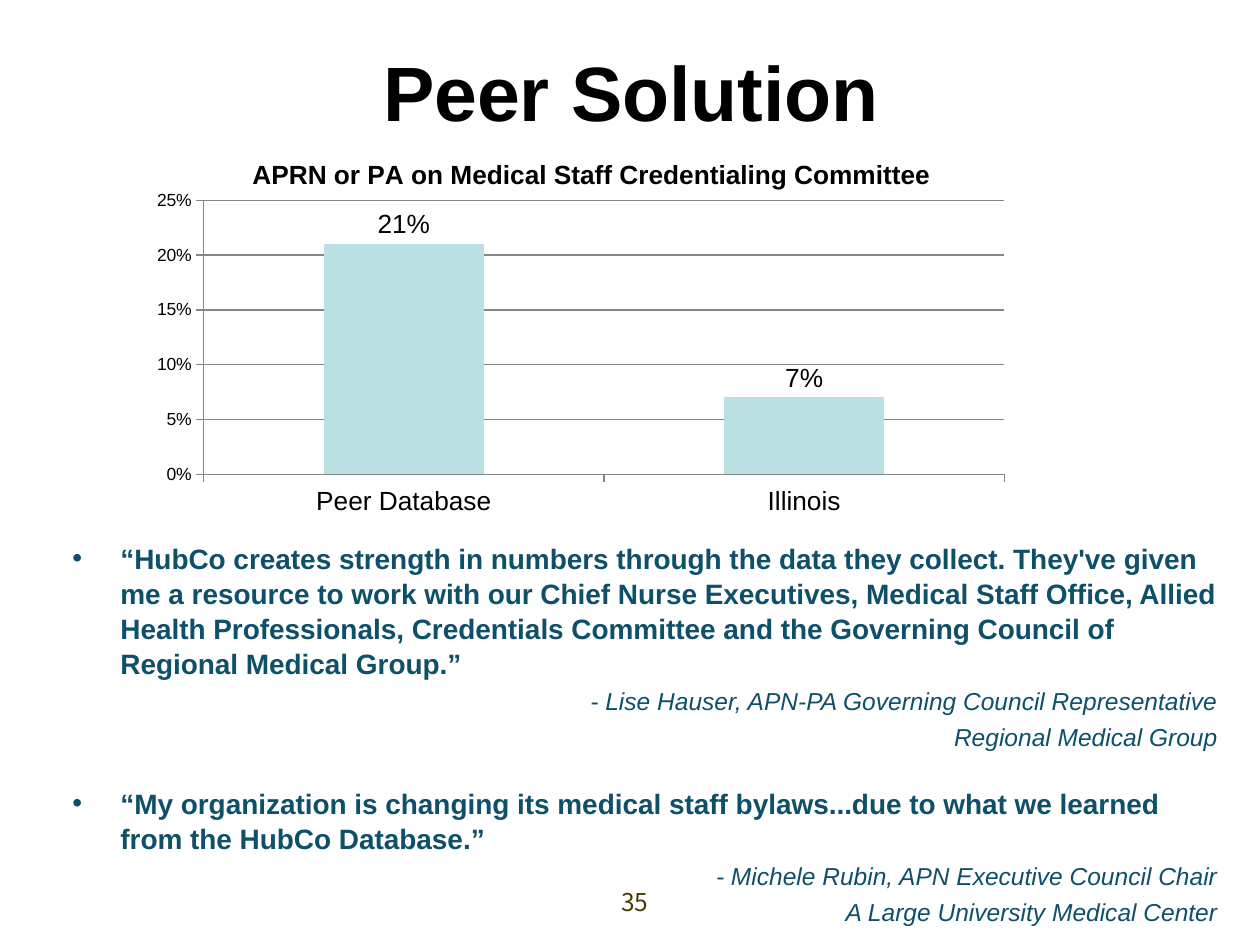
from lxml.etree import SubElement
from pptx import Presentation
from pptx.chart.data import CategoryChartData as Data
from pptx.dml.color import RGBColor as RGB
from pptx.enum.chart import XL_CHART_TYPE as Kind, XL_LABEL_POSITION as Spot
from pptx.enum.chart import XL_TICK_MARK as Tick
from pptx.enum.text import MSO_ANCHOR as Anchor, PP_ALIGN as Align
from pptx.oxml import parse_xml
from pptx.oxml.ns import nsdecls, qn
from pptx.util import Pt

PX = 914400 / 126
HUES = {"ink": "000000", "quote": "0E4F69", "bar": "BBE0E3",
        "grid": "868686", "page": "4B3905"}
FACE = "Arial"
HEAD = "APRN or PA on Medical Staff Credentialing Committee"
RATES = {"Peer Database": 0.21, "Illinois": 0.07}
QUOTES = [
    ("“HubCo creates strength in numbers through the data they collect. "
     "They've given me a resource to work with our Chief Nurse Executives, "
     "Medical Staff Office, Allied Health Professionals, Credentials Committee "
     "and the Governing Council of Regional Medical Group.”",
     ["- Lise Hauser, APN-PA Governing Council Representative",
      "Regional Medical Group"]),
    ("“My organization is changing its medical staff bylaws...due to what we "
     "learned from the HubCo Database.”",
     ["- Michele Rubin, APN Executive Council Chair",
      "A Large University Medical Center"]),
]


def emu(*box):
    return [round(n * PX) for n in box]


def style(font, size, hue="ink", **more):
    look = {"name": FACE, "size": Pt(size), "bold": False, "italic": False, **more}
    for key, val in look.items():
        setattr(font, key, val)
    font.color.rgb = RGB.from_string(HUES[hue])


def add_title(slide, box):
    shape = slide.shapes.title
    shape.left, shape.top, shape.width, shape.height = emu(*box)
    frame = shape.text_frame
    frame.text = "Peer Solution"
    frame.vertical_anchor = Anchor.TOP
    para = frame.paragraphs[0]
    para.alignment = Align.CENTER
    style(para.font, 44, bold=True)


def place(node, before, **parts):
    """Put a manual layout into a chart title or plot area."""
    for old in node.findall(qn("c:layout")):
        node.remove(old)
    vals = "".join(f'<c:{key} val="{val}"/>' for key, val in parts.items())
    layout = parse_xml(f'<c:layout {nsdecls("c")}><c:manualLayout>{vals}'
                       '</c:manualLayout></c:layout>')
    node.insert(before, layout)


def add_bars(slide, box):
    data = Data(number_format="0%")
    data.categories = list(RATES)
    data.add_series(HEAD, list(RATES.values()))
    chart = slide.shapes.add_chart(Kind.COLUMN_CLUSTERED, *emu(*box), data).chart
    style(chart.font, 10)
    chart.has_legend = False

    # Heading
    chart.has_title = True
    frame = chart.chart_title.text_frame
    frame.text = HEAD
    style(frame.paragraphs[0].runs[0].font, 15, bold=True)
    place(chart.chart_title._element, 1, xMode="edge", yMode="edge", x=0.12, y=0.07)

    # Plot frame
    area = chart._chartSpace.chart.plotArea
    place(area, 0, layoutTarget="inner", xMode="edge", yMode="edge",
          x=0.07, y=0.19, w=0.91, h=0.69)

    # Axes
    rate, place_axis = chart.value_axis, chart.category_axis
    rate.minimum_scale, rate.maximum_scale, rate.major_unit = 0, 0.25, 0.05
    rate.tick_labels.number_format = "0%"
    rate.tick_labels.number_format_is_linked = False
    rate.has_major_gridlines = True
    for axis, size in ((rate, 10), (place_axis, 15)):
        axis.major_tick_mark = Tick.OUTSIDE
        style(axis.tick_labels.font, size)
    for line in (rate.format.line, place_axis.format.line,
                 rate.major_gridlines.format.line):
        line.width = Pt(0.75)
        line.color.rgb = RGB.from_string(HUES["grid"])

    # Bars and labels
    plot = chart.plots[0]
    plot.gap_width, plot.vary_by_categories = 150, False
    fill = plot.series[0].format.fill
    fill.solid()
    fill.fore_color.rgb = RGB.from_string(HUES["bar"])
    plot.has_data_labels = True
    labels = plot.data_labels
    labels.show_value, labels.position = True, Spot.OUTSIDE_END
    labels.number_format, labels.number_format_is_linked = "0%", False
    style(labels.font, 15)


def add_bullet(para, indent):
    props = para._p.get_or_add_pPr()
    props.set("marL", str(indent))
    props.set("indent", str(-indent))
    SubElement(props, qn("a:buFont")).set("typeface", FACE)
    SubElement(props, qn("a:buChar")).set("char", "•")


def add_quotes(slide, box):
    frame = slide.shapes.add_textbox(*emu(*box)).text_frame
    frame.word_wrap = True
    para = frame.paragraphs[0]
    for at, (quote, source) in enumerate(QUOTES):
        if at:
            para = frame.add_paragraph()
            para.space_before = Pt(19)
        para.line_spacing = 1.04
        add_bullet(para, *emu(48))
        para.text = quote
        style(para.font, 16, "quote", bold=True)
        for line in source:
            para = frame.add_paragraph()
            para.text = line
            para.alignment = Align.RIGHT
            para.line_spacing, para.space_before = 1.04, Pt(3)
            style(para.font, 14, "quote", italic=True)


def add_page(slide, box):
    frame = slide.shapes.add_textbox(*emu(*box)).text_frame
    frame.word_wrap = True
    para = frame.paragraphs[0]
    para.text = "35"
    para.alignment = Align.CENTER
    style(para.font, 14, "page", name="Noto Sans CJK JP")


def main():
    deck = Presentation()
    deck.slide_width, deck.slide_height = emu(1260, 945)
    slide = deck.slides.add_slide(deck.slide_layouts[5])
    add_page(slide, (504, 881, 262, 63))
    add_title(slide, (16, 38, 1231, 158))
    add_quotes(slide, (60, 534, 1170, 411))
    add_bars(slide, (142, 125, 880, 397))
    deck.save("out.pptx")


if __name__ == "__main__":
    main()
